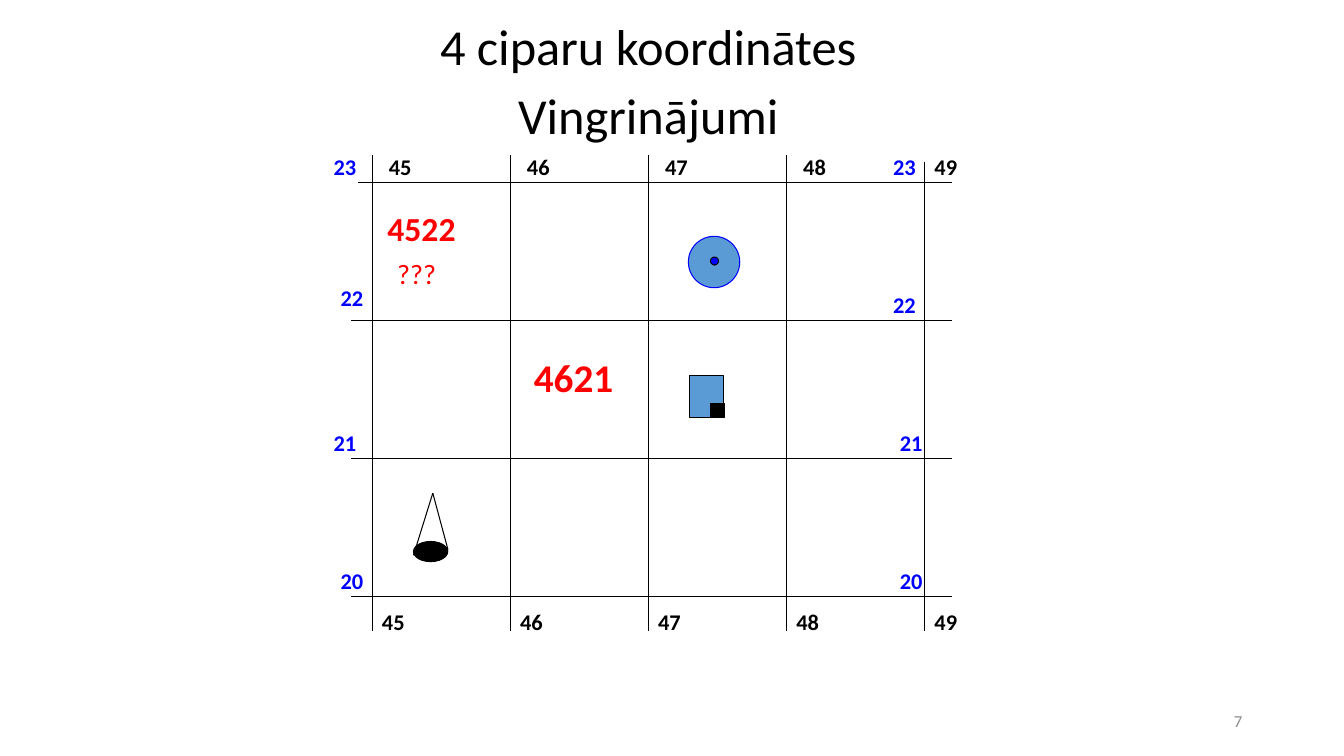
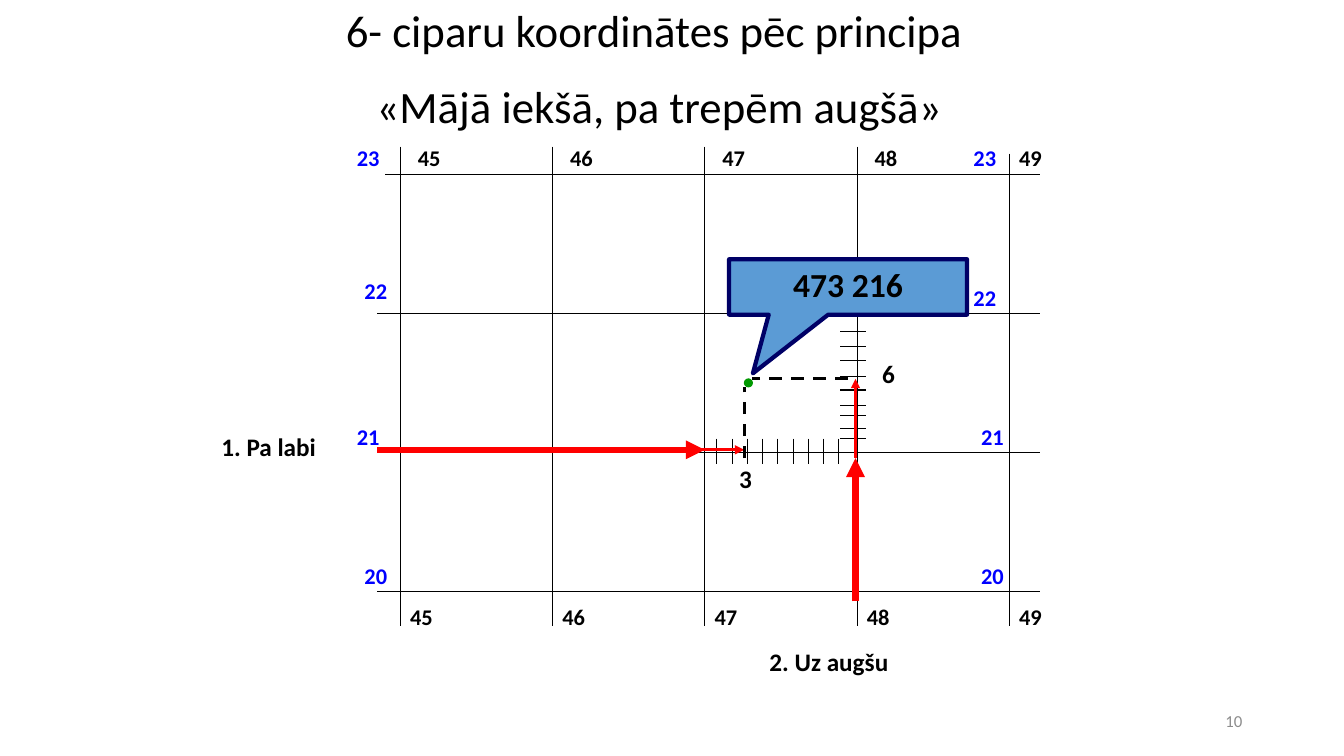
from dataclasses import dataclass
from typing import Optional

from lxml.etree import SubElement
from pptx import Presentation
from pptx.dml.color import RGBColor
from pptx.enum.dml import MSO_LINE
from pptx.enum.shapes import MSO_CONNECTOR, MSO_SHAPE
from pptx.enum.text import MSO_ANCHOR, PP_ALIGN
from pptx.oxml.ns import qn
from pptx.util import Inches, Pt

BLACK = RGBColor(0x00, 0x00, 0x00)
RED = RGBColor(0xFF, 0x00, 0x00)
BLUE = RGBColor(0x00, 0x00, 0xFF)
NAVY = RGBColor(0x00, 0x00, 0x66)
SKY = RGBColor(0x5B, 0x9B, 0xD5)
GREEN = RGBColor(0x00, 0x99, 0x00)
GRAY = RGBColor(0x8C, 0x8C, 0x8C)
FONT = "Calibri"
EASTINGS = ("45", "46", "47", "48", "49")
NORTHINGS = ("23", "22", "21", "20")


@dataclass(frozen=True)
class Grid:
    left: float
    top: float
    column: float
    row: float

    def x(self, columns: float) -> float:
        return self.left + columns * self.column

    def y(self, rows: float) -> float:
        return self.top + rows * self.row


@dataclass(frozen=True)
class Label:
    text: str
    column: float
    row: float
    width: float
    size: float
    color: RGBColor = BLACK
    bold: bool = True


@dataclass(frozen=True)
class Line:
    start: tuple[float, float]
    end: tuple[float, float]
    color: RGBColor = BLACK
    width: float = 0.75
    arrow: bool = False
    dashed: bool = False


@dataclass(frozen=True)
class Figure:
    kind: MSO_SHAPE
    column: float
    row: float
    width: float
    height: float
    fill: RGBColor
    outline: RGBColor = BLACK
    line_width: float = 0.75


@dataclass(frozen=True)
class Title:
    lines: tuple[str, ...]
    left: float
    top: float
    width: float
    size: float
    space: float


def add_text(slide, lines: tuple[str, ...], left: float, top: float, width: float,
             size: float, color: RGBColor = BLACK, bold: bool = False,
             alignment: PP_ALIGN = PP_ALIGN.LEFT, space: float = 0,
             height: Optional[float] = None) -> None:
    box_height = height or len(lines) * size / 60 + 0.1
    box = slide.shapes.add_textbox(Inches(left), Inches(top), Inches(width), Inches(box_height))
    frame = box.text_frame
    frame.word_wrap = True
    frame.vertical_anchor = MSO_ANCHOR.MIDDLE if height else MSO_ANCHOR.TOP
    frame.text = "\n".join(lines)
    for paragraph in frame.paragraphs:
        paragraph.alignment = alignment
        paragraph.space_before = Pt(space)
        set_font(paragraph, size, color, bold)


def set_font(paragraph, size: float, color: RGBColor, bold: bool) -> None:
    paragraph.font.name = FONT
    paragraph.font.size = Pt(size)
    paragraph.font.bold = bold
    paragraph.font.color.rgb = color


def add_label(slide, grid: Grid, label: Label) -> None:
    add_text(slide, (label.text,), grid.x(label.column), grid.y(label.row),
             label.width, label.size, label.color, label.bold)


def add_line(slide, grid: Grid, line: Line) -> None:
    (start_column, start_row), (end_column, end_row) = line.start, line.end
    connector = slide.shapes.add_connector(
        MSO_CONNECTOR.STRAIGHT,
        Inches(grid.x(start_column)), Inches(grid.y(start_row)),
        Inches(grid.x(end_column)), Inches(grid.y(end_row)))
    connector.line.color.rgb = line.color
    connector.line.width = Pt(line.width)
    if line.dashed:
        connector.line.dash_style = MSO_LINE.DASH
    if line.arrow:
        SubElement(connector.line._get_or_add_ln(), qn("a:tailEnd"), type="triangle")
    SubElement(connector._element.spPr, qn("a:effectLst"))


def add_figure(slide, grid: Grid, figure: Figure):
    shape = slide.shapes.add_shape(
        figure.kind, Inches(grid.x(figure.column)), Inches(grid.y(figure.row)),
        Inches(figure.width), Inches(figure.height))
    shape.shadow.inherit = False
    shape.fill.solid()
    shape.fill.fore_color.rgb = figure.fill
    shape.line.color.rgb = figure.outline
    shape.line.width = Pt(figure.line_width)
    return shape


def add_map(slide, grid: Grid) -> None:
    last_column, last_row = len(EASTINGS) - 1, len(NORTHINGS) - 1
    width = 0.35 * grid.column
    for column, easting in enumerate(EASTINGS):
        is_last = column == last_column
        add_line(slide, grid, Line((column, -0.15 if is_last else -0.2), (column, last_row + 0.25)))
        top_column = column if is_last else column + 0.05
        add_label(slide, grid, Label(easting, top_column, -0.25, width, 16))
        add_label(slide, grid, Label(easting, column, last_row + 0.05, width, 16))
    for row, northing in enumerate(NORTHINGS):
        add_line(slide, grid, Line((last_column + 0.2, row), (-0.15 if row else -0.1, row)))
        left_column = -0.3 if row % 2 else -0.35
        left_row = row - (0.3 if row == 1 else 0.25)
        right_column = last_column - (0.3 if row < 2 else 0.25)
        add_label(slide, grid, Label(northing, left_column, left_row, width, 16, BLUE))
        add_label(slide, grid, Label(northing, right_column, row - 0.25, width, 16, BLUE))


def add_map_slide(presentation, grid: Grid, title: Title, number: str,
                  lines: tuple[Line, ...], figures: tuple[Figure, ...],
                  labels: tuple[Label, ...]):
    slide = presentation.slides.add_slide(presentation.slide_layouts[6])
    add_text(slide, (number,), 9.42, 6.95, 3, 12, GRAY, alignment=PP_ALIGN.RIGHT, height=0.4)
    add_text(slide, title.lines, title.left, title.top, title.width, title.size,
             alignment=PP_ALIGN.CENTER, space=title.space)
    add_map(slide, grid)
    for figure in figures:
        add_figure(slide, grid, figure)
    for line in lines:
        add_line(slide, grid, line)
    for label in labels:
        add_label(slide, grid, label)
    return slide


def add_four_digit_slide(presentation) -> None:
    add_map_slide(
        presentation, Grid(3.69, 1.81, 1.37, 1.37),
        Title(("4 ciparu koordinātes", "Vingrinājumi"), 1.04, 0.1, 10.78, 36, 6), "7",
        lines=(
            Line((0.3, 2.7), (0.44, 2.25)),
            Line((0.55, 2.66), (0.44, 2.25)),
        ),
        figures=(
            Figure(MSO_SHAPE.RECTANGLE, 2.3, 1.4, 0.34, 0.41, SKY),
            Figure(MSO_SHAPE.RECTANGLE, 2.45, 1.6, 0.14, 0.14, BLACK),
            Figure(MSO_SHAPE.OVAL, 0.3, 2.6, 0.34, 0.2, BLACK),
            Figure(MSO_SHAPE.OVAL, 2.29, 0.39, 0.51, 0.51, SKY, BLUE),
            Figure(MSO_SHAPE.OVAL, 2.45, 0.54, 0.08, 0.08, BLUE),
        ),
        labels=(
            Label("4621", 1.1, 1.2, 1.1, 28, RED),
            Label("4522", 0.04, 0.15, 1.17, 24, RED),
            Label("???", 0.11, 0.5, 1.02, 20, RED, False),
        ))


def add_six_digit_slide(presentation) -> None:
    grid = Grid(3.97, 1.73, 1.51, 1.38)
    tick_columns = [2.08 + 0.1 * index for index in range(9)]
    tick_rows = (1.13, 1.24, 1.34, 1.45, 1.55, 1.66, 1.73, 1.83, 1.9)
    slide = add_map_slide(
        presentation, grid,
        Title(("6- ciparu koordinātes pēc principa ", "«Mājā iekšā, pa trepēm augšā»"),
              0.59, -0.02, 11.9, 32, 16), "10",
        lines=(
            *(Line((column, 1.9), (column, 2.08)) for column in tick_columns),
            *(Line((2.89, row), (3.06, row)) for row in tick_rows),
            Line((-0.15, 1.98), (2, 1.98), RED, 4.5, arrow=True),
            Line((1.94, 1.98), (2.26, 1.98), RED, 2.25, arrow=True),
            Line((2.99, 3.07), (2.99, 2.04), RED, 4.5, arrow=True),
            Line((2.99, 2.04), (2.99, 1.47), RED, 2.25, arrow=True),
            Line((2.26, 2.04), (2.26, 1.53), width=2.25, dashed=True),
            Line((2.94, 1.47), (2.31, 1.47), width=2.25, dashed=True),
        ),
        figures=(Figure(MSO_SHAPE.OVAL, 2.26, 1.47, 0.08, 0.08, GREEN, GREEN),),
        labels=(
            Label("3", 2.16, 2.04, 0.39, 18),
            Label("6", 3.1, 1.29, 0.32, 18),
            Label("1. Pa labi", -1.24, 1.81, 1.34, 18),
            Label("2. Uz augšu", 2.36, 3.36, 1.65, 18),
        ))
    callout = add_figure(slide, grid, Figure(
        MSO_SHAPE.RECTANGULAR_CALLOUT, 2.16, 0.61, 2.36, 0.55, SKY, NAVY, 3))
    callout.adjustments[0] = -0.4
    callout.adjustments[1] = 1.56
    callout.text_frame.vertical_anchor = MSO_ANCHOR.TOP
    paragraph = callout.text_frame.paragraphs[0]
    paragraph.text = "473 216"
    paragraph.alignment = PP_ALIGN.CENTER
    set_font(paragraph, 24, BLACK, True)


def main() -> None:
    presentation = Presentation()
    presentation.slide_width = Inches(13.33)
    presentation.slide_height = Inches(7.5)
    add_four_digit_slide(presentation)
    add_six_digit_slide(presentation)
    presentation.save("out.pptx")


if __name__ == "__main__":
    main()
